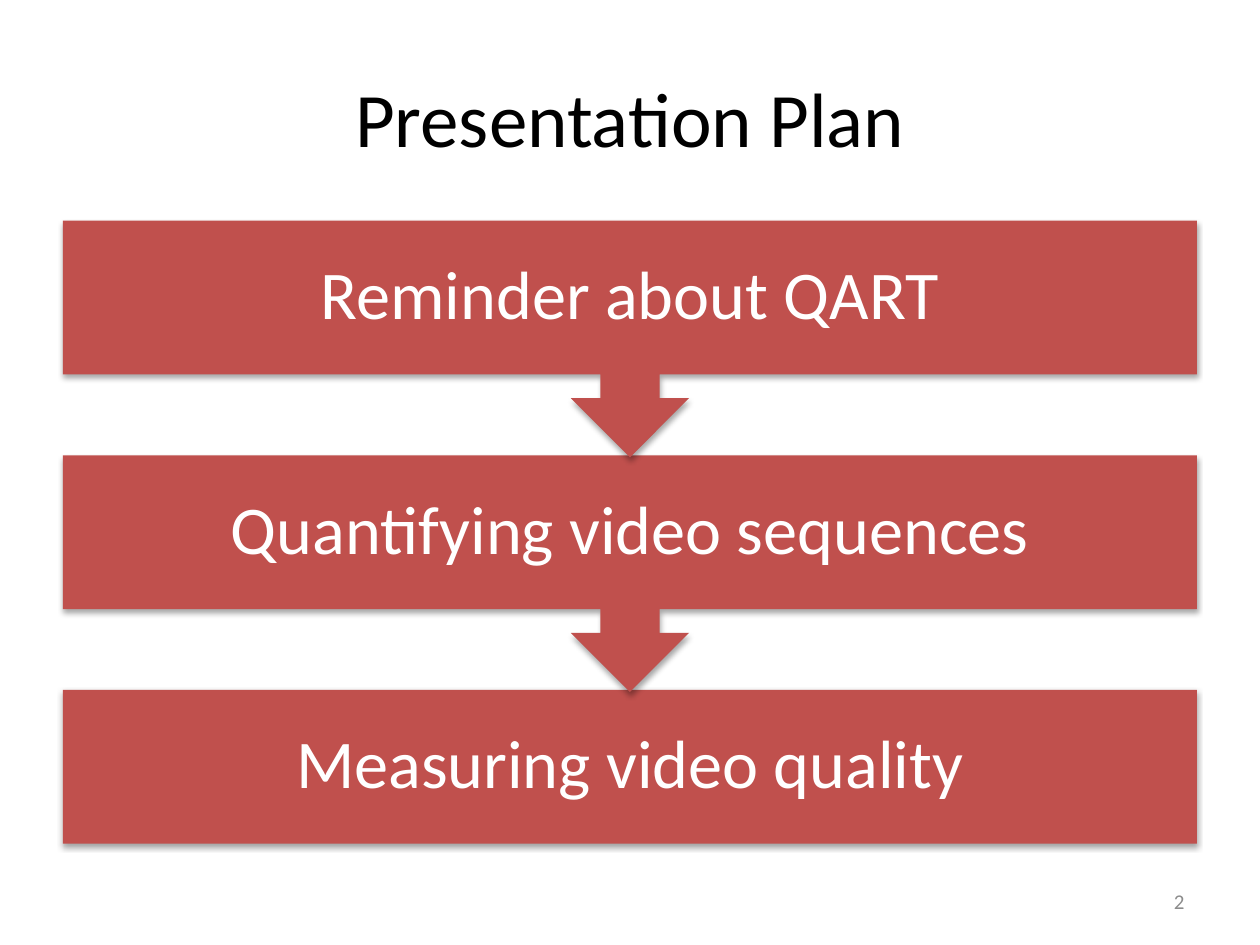
from dataclasses import dataclass

import lxml.etree
import pptx
import pptx.dml.color
import pptx.enum.shapes
import pptx.enum.text
import pptx.oxml.ns
import pptx.shapes.autoshape
import pptx.slide
import pptx.text.text
import pptx.util
from pptx.util import Cm

BLACK = pptx.dml.color.RGBColor(0x00, 0x00, 0x00)
WHITE = pptx.dml.color.RGBColor(0xFF, 0xFF, 0xFF)
RED = pptx.dml.color.RGBColor(0xC0, 0x50, 0x4D)
GREY = pptx.dml.color.RGBColor(0x8C, 0x8C, 0x8C)

CENTER = pptx.enum.text.PP_ALIGN.CENTER
RIGHT = pptx.enum.text.PP_ALIGN.RIGHT
BOX = pptx.enum.shapes.MSO_SHAPE.RECTANGLE
BOX_WITH_ARROW = pptx.enum.shapes.MSO_SHAPE.DOWN_ARROW_CALLOUT

LEFT = Cm(1.27)
WIDTH = Cm(22.86)
FIRST_TOP = Cm(4.45)
STEP_PITCH = Cm(4.73)
BOX_HEIGHT = Cm(3.1)
BOX_WITH_ARROW_HEIGHT = Cm(4.77)
STEP_MARGIN = Cm(0.76)


@dataclass(frozen=True)
class Step:
    topic: str
    outline: pptx.enum.shapes.MSO_SHAPE
    height: pptx.util.Length


PLAN = (
    Step("Reminder about QART", BOX_WITH_ARROW, BOX_WITH_ARROW_HEIGHT),
    Step("Quantifying video sequences", BOX_WITH_ARROW, BOX_WITH_ARROW_HEIGHT),
    Step("Measuring video quality", BOX, BOX_HEIGHT),
)


def write_text(
    frame: pptx.text.text.TextFrame,
    text: str,
    *,
    size: float,
    color: pptx.dml.color.RGBColor,
    align: pptx.enum.text.PP_ALIGN = CENTER,
    line_spacing: float = 1.0,
) -> None:
    frame.word_wrap = True
    frame.vertical_anchor = pptx.enum.text.MSO_ANCHOR.MIDDLE
    paragraph = frame.paragraphs[0]
    paragraph.alignment = align
    paragraph.line_spacing = line_spacing
    run = paragraph.add_run()
    run.text = text
    run.font.name = "Calibri"
    run.font.size = pptx.util.Pt(size)
    run.font.color.rgb = color


def add_soft_shadow(shape: pptx.shapes.autoshape.Shape) -> None:
    qn = pptx.oxml.ns.qn
    shape.shadow.inherit = False
    effects = shape.element.spPr.find(qn("a:effectLst"))
    shadow = lxml.etree.SubElement(
        effects,
        qn("a:outerShdw"),
        blurRad=str(pptx.util.Pt(3.1)),
        dist=str(pptx.util.Pt(1.8)),
        dir="5400000",
        rotWithShape="0",
    )
    color = lxml.etree.SubElement(shadow, qn("a:srgbClr"), val=str(BLACK))
    lxml.etree.SubElement(color, qn("a:alpha"), val="35000")


def draw_step(slide: pptx.slide.Slide, step: Step, top: int) -> None:
    shape = slide.shapes.add_shape(step.outline, LEFT, top, WIDTH, step.height)
    shape.fill.solid()
    shape.fill.fore_color.rgb = RED
    shape.line.fill.background()
    add_soft_shadow(shape)
    frame = shape.text_frame
    frame.margin_left = frame.margin_right = STEP_MARGIN
    frame.margin_top = frame.margin_bottom = STEP_MARGIN
    write_text(frame, step.topic, size=39, color=WHITE, line_spacing=0.9)


def main() -> None:
    deck = pptx.Presentation()
    deck.slide_width = Cm(25.4)
    deck.slide_height = Cm(19.05)
    slide = deck.slides.add_slide(deck.slide_layouts.get_by_name("Title Only"))

    heading = slide.shapes.title
    heading.left, heading.top = LEFT, Cm(0.76)
    heading.width, heading.height = WIDTH, Cm(3.18)
    write_text(heading.text_frame, "Presentation Plan", size=44, color=BLACK)

    for position, step in reversed(list(enumerate(PLAN))):
        draw_step(slide, step, FIRST_TOP + position * STEP_PITCH)

    page_number = slide.shapes.add_textbox(Cm(18.21), Cm(17.65), Cm(5.92), Cm(1.02))
    write_text(page_number.text_frame, "2", size=12, color=GREY, align=RIGHT)

    deck.save("out.pptx")


if __name__ == "__main__":
    main()
